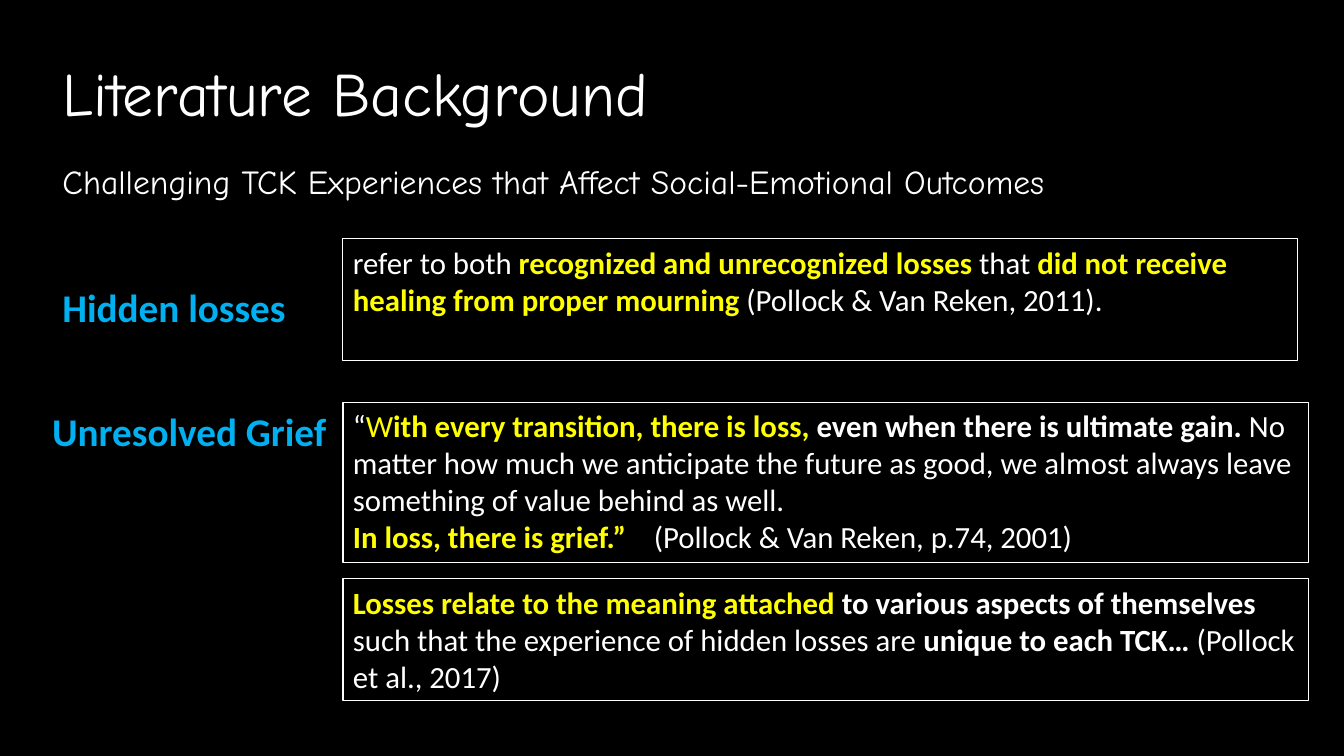
from lxml import etree
from pptx import Presentation
from pptx.dml.color import RGBColor
from pptx.enum import text
from pptx.oxml import ns
from pptx.util import Pt

WHITE, YELLOW, BLUE, BLACK = "FFFFFF", "FFFF00", "00B0F0", "000000"


def rgb(value):
    return RGBColor.from_string(value)


def add_text(s, box, paragraphs, size, font, **formats):
    """Add a text box; each paragraph is a list of (text, colour, bold) runs."""
    sp = s.shapes.add_textbox(*(Pt(v) for v in box))
    tf = sp.text_frame
    for name, value in {"word_wrap": True, **formats}.items():
        setattr(tf, name, value)
    for i, runs in enumerate(paragraphs):
        p = tf.paragraphs[0] if i == 0 else tf.add_paragraph()
        for words, colour, bold in runs:
            r = p.add_run()
            r.text = words
            r.font.color.rgb = rgb(colour)
            for name, value in {"size": Pt(size), "name": font, "bold": bold}.items():
                setattr(r.font, name, value)
    return sp


prs = Presentation()
prs.slide_width, prs.slide_height = Pt(960), Pt(540)
s = prs.slides.add_slide(prs.slide_layouts[6])
s.background.fill.solid()
s.background.fill.fore_color.rgb = rgb(BLACK)

# Title and subtitle
headings = [
    ("Literature Background", (37.5, 18, 701, 101.5), 44, 0.9, text.MSO_ANCHOR.MIDDLE),
    ("Challenging TCK Experiences that Affect Social-Emotional Outcomes",
     (37.5, 82.8, 829.5, 58.3), 24, 2.0, text.MSO_ANCHOR.TOP),
]
for words, box, size, spacing, anchor in headings:
    sp = add_text(s, box, [[(words, WHITE, False)]], size, "Comic Neue",
                  vertical_anchor=anchor)
    sp.text_frame.paragraphs[0].line_spacing = spacing

# Topic labels
for words, box in [("Hidden losses", (37.5, 198.7, 177, 41)),
                   ("Unresolved Grief", (30.2, 287.3, 212.4, 41))]:
    add_text(s, box, [[(words, BLUE, True)]], 28, "Calibri", word_wrap=False)

# Outlined quotations: top, width, height, paragraphs
quotes = [
    (170.4, 681.8, 87.1, [[
        ("refer to both ", WHITE, False),
        ("recognized and unrecognized losses ", YELLOW, True),
        ("that ", WHITE, False),
        ("did not receive healing from proper mourning", YELLOW, True),
        (" (Pollock & Van Reken, 2011).", WHITE, False)]]),
    (287.3, 689.8, 114.5, [[
        ("“", WHITE, False),
        ("W", YELLOW, False),
        ("ith every transition, there is loss, ", YELLOW, True),
        ("even when there is ultimate gain. ", WHITE, True),
        ("No matter how much we anticipate the future as good, we almost "
         "always leave something of value behind as well.", WHITE, False)], [
        ("In loss, there is grief.”", YELLOW, True),
        ("\t(Pollock & Van Reken, p.74, 2001)", WHITE, False)]]),
    (413.3, 689.8, 87.1, [[
        ("Losses relate to the meaning attached ", YELLOW, True),
        ("to various aspects of themselves ", WHITE, True),
        ("such that the experience of hidden losses are ", WHITE, False),
        ("unique to each TCK…", WHITE, True),
        (" (Pollock et al., 2017)", WHITE, False)]]),
]
for top, width, height, paragraphs in quotes:
    sp = add_text(s, (245, top, width, height), paragraphs, 22, "Calibri")
    sp.line.color.rgb = rgb(WHITE)
    sp.line.width = Pt(0.75)
    # Tab stop that sets the citation apart from the closing words
    if len(paragraphs) > 1:
        pPr = sp.text_frame.paragraphs[-1]._p.get_or_add_pPr()
        tabs = etree.SubElement(pPr, ns.qn("a:tabLst"))
        etree.SubElement(tabs, ns.qn("a:tab"), pos=str(Pt(215)), algn="l")

prs.save("out.pptx")
